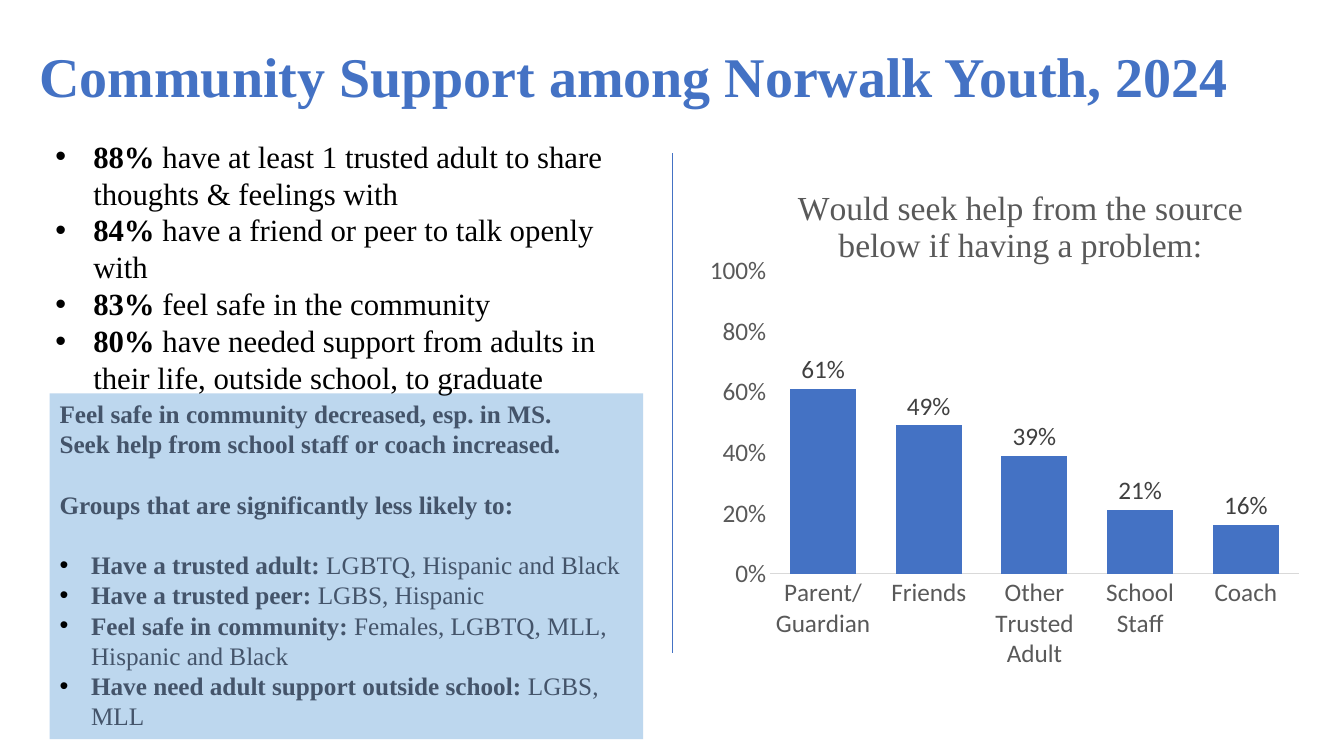
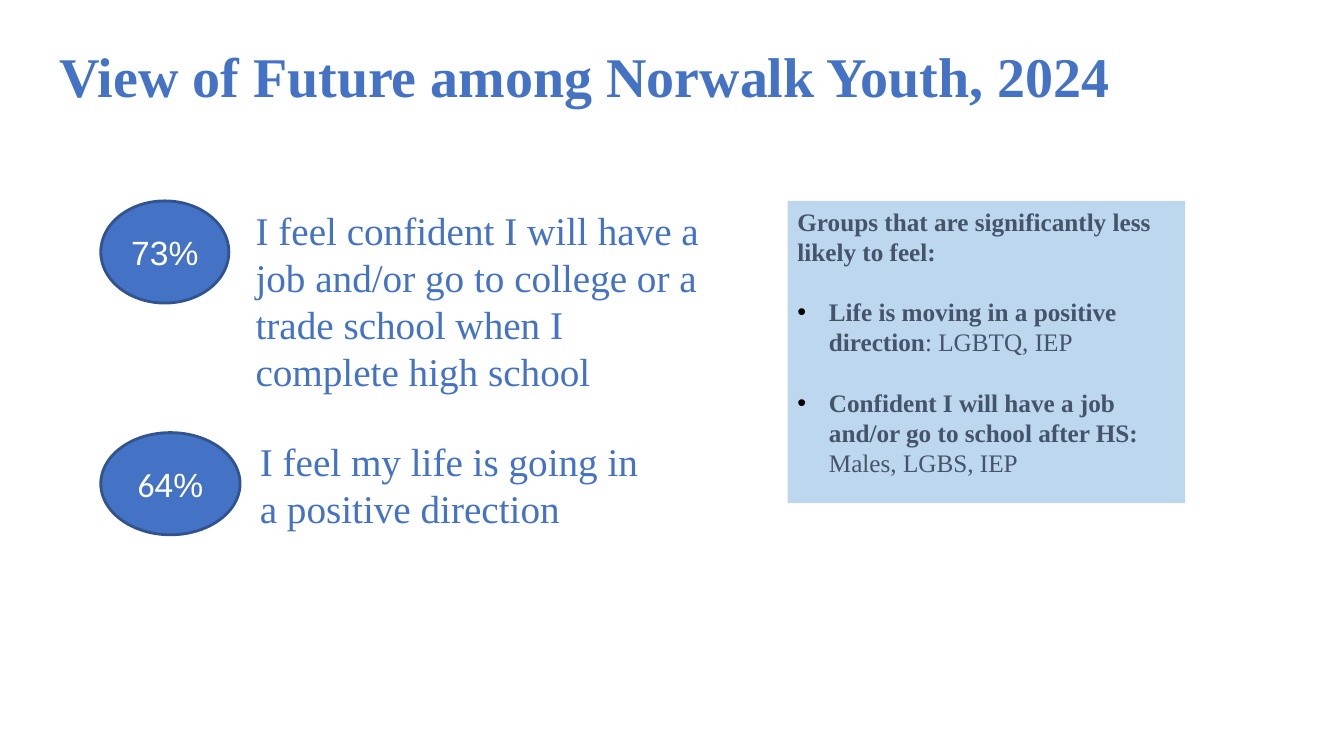
from lxml.etree import SubElement
from pptx import Presentation
from pptx.chart.data import CategoryChartData
from pptx.dml.color import RGBColor
from pptx.enum.chart import XL_CHART_TYPE, XL_LABEL_POSITION, XL_TICK_MARK
from pptx.enum.shapes import MSO_CONNECTOR, MSO_SHAPE
from pptx.enum.text import MSO_ANCHOR, PP_ALIGN
from pptx.oxml.ns import qn
from pptx.util import Pt

BLUE, DARK_BLUE, PALE_BLUE, SLATE = "4472C4", "31538F", "BDD7EE", "44546A"
BLACK, WHITE, GRAY, LABEL_GRAY, AXIS_GRAY = "000000", "FFFFFF", "595959", "404040", "D9D9D9"
SERIF, SANS, CHART_FONT = "Times New Roman", "Arial", "Calibri"
LINE_PITCH = 1.2
CALLOUT_SIZE = 18
CALLOUT_GAP = CALLOUT_SIZE * LINE_PITCH
TITLE_RIGHT = 923


def color(value):
    """Turn a hex string into a colour."""
    return RGBColor.from_string(value)


def style_font(font, size, fill, name=SERIF, bold=False):
    """Set the look of a font."""
    font.size, font.name, font.bold = Pt(size), name, bold
    font.color.rgb = color(fill)


def add_bullet(paragraph, indent):
    """Give a paragraph a black hanging bullet."""
    properties = paragraph._p.get_or_add_pPr()
    properties.set("marL", str(Pt(indent)))
    properties.set("indent", str(-Pt(indent)))
    SubElement(SubElement(properties, qn("a:buClr")), qn("a:srgbClr"), val=BLACK)
    SubElement(properties, qn("a:buFont"), typeface=SANS)
    SubElement(properties, qn("a:buChar"), char="•")


def write(frame, *runs, size, fill, name=SERIF, bold=False, pitch=LINE_PITCH,
          gap=0, indent=0, align=PP_ALIGN.LEFT):
    """Add a paragraph whose runs are pairs of text and font overrides."""
    paragraph = frame.paragraphs[0]
    if paragraph.runs:
        paragraph = frame.add_paragraph()
    paragraph.alignment = align
    if pitch:
        paragraph.line_spacing = Pt(size * pitch)
    paragraph.space_before = Pt(gap)
    if indent:
        add_bullet(paragraph, indent)
    for text, overrides in runs:
        run = paragraph.add_run()
        run.text = text
        style_font(run.font, **{"size": size, "fill": fill, "name": name, "bold": bold, **overrides})


def add_text_box(slide, left, top, width, height, anchor=MSO_ANCHOR.TOP):
    """Add a wrapping text box and return its frame."""
    frame = slide.shapes.add_textbox(Pt(left), Pt(top), Pt(width), Pt(height)).text_frame
    frame.word_wrap = True
    frame.vertical_anchor = anchor
    return frame


def add_filled_shape(slide, kind, left, top, width, height, fill, outline=None):
    """Add a flat preset shape and return its text frame."""
    shape = slide.shapes.add_shape(kind, Pt(left), Pt(top), Pt(width), Pt(height))
    shape.shadow.inherit = False
    shape.fill.solid()
    shape.fill.fore_color.rgb = color(fill)
    if outline:
        shape.line.color.rgb = color(outline)
        shape.line.width = Pt(2)
    else:
        shape.line.fill.background()
    shape.text_frame.word_wrap = True
    return shape.text_frame


def add_titled_slide(presentation, title, left):
    """Add a blank slide with the shared title style."""
    slide = presentation.slides.add_slide(presentation.slide_layouts[6])
    frame = add_text_box(slide, left, 19.5, TITLE_RIGHT - left, 72.5, MSO_ANCHOR.MIDDLE)
    write(frame, (title, {}), size=40, fill=BLUE, bold=True, pitch=0.9 * LINE_PITCH)
    return slide


def add_callout(slide, left, top, width, height, headings, groups, group_gap=0):
    """Add a pale box with bold headings and bulleted groups."""
    frame = add_filled_shape(slide, MSO_SHAPE.RECTANGLE, left, top, width, height, PALE_BLUE)
    frame.vertical_anchor = MSO_ANCHOR.TOP
    for text, gap in headings:
        write(frame, (text, {}), size=CALLOUT_SIZE, fill=SLATE, bold=True, gap=gap)
    for index, (label, members) in enumerate(groups):
        write(frame, (label, {"bold": True}), (members, {}), size=CALLOUT_SIZE, fill=SLATE,
              indent=22.5, gap=group_gap if index else CALLOUT_GAP)


def add_facts(slide, facts):
    """Add the bulleted list of percentages."""
    frame = add_text_box(slide, 32.5, 94.5, 439, 167)
    for share, text in facts:
        write(frame, (share, {"bold": True}), (text, {}), size=22, fill=BLACK, indent=27)


def add_divider(slide, left, top, bottom):
    """Add a thin vertical line."""
    line = slide.shapes.add_connector(MSO_CONNECTOR.STRAIGHT, Pt(left), Pt(top), Pt(left), Pt(bottom))
    line.line.color.rgb = color(BLUE)
    line.line.width = Pt(0.5)
    SubElement(line._element.spPr, qn("a:effectLst"))


def set_layout(parent, before, target=None, **place):
    """Place a chart part by fractions of the chart area."""
    for old in parent.findall(qn("c:layout")):
        parent.remove(old)
    layout = parent.makeelement(qn("c:layout"))
    parent.find(qn(before)).addprevious(layout)
    manual = SubElement(layout, qn("c:manualLayout"))
    if target:
        SubElement(manual, qn("c:layoutTarget"), val=target)
    for mode in ("xMode", "yMode"):
        SubElement(manual, qn(f"c:{mode}"), val="edge")
    for key, value in place.items():
        SubElement(manual, qn(f"c:{key}"), val=str(value))


def style_axis(axis):
    """Set the look shared by both axes."""
    axis.major_tick_mark = axis.minor_tick_mark = XL_TICK_MARK.NONE
    axis.has_major_gridlines = False
    style_font(axis.tick_labels.font, 18, GRAY, CHART_FONT)


def add_column_chart(slide, left, top, width, height, title_lines, shares):
    """Add the percentage column chart."""
    data = CategoryChartData(number_format="0%")
    data.categories = list(shares)
    data.add_series("Series 1", list(shares.values()))
    chart = slide.shapes.add_chart(XL_CHART_TYPE.COLUMN_CLUSTERED, Pt(left), Pt(top),
                                   Pt(width), Pt(height), data).chart
    chart.has_legend = False
    style_font(chart.font, 10, BLACK, CHART_FONT)

    chart.has_title = True
    for line in title_lines:
        write(chart.chart_title.text_frame, (line, {}), size=24, fill=GRAY,
              pitch=None, align=PP_ALIGN.CENTER)
    chart.chart_title.include_in_layout = False
    set_layout(chart.chart_title._element, "c:overlay", x=0.16, y=0.08)
    plot_area = chart._chartSpace.chart.plotArea
    set_layout(plot_area, "c:barChart", target="inner", x=0.12, y=0.24, w=0.86, h=0.56)

    style_axis(chart.category_axis)
    chart.category_axis.format.line.color.rgb = color(AXIS_GRAY)
    chart.category_axis.format.line.width = Pt(0.75)
    value_axis = chart.value_axis
    style_axis(value_axis)
    value_axis.format.line.fill.background()
    value_axis.minimum_scale, value_axis.maximum_scale, value_axis.major_unit = 0, 1, 0.2
    value_axis.tick_labels.number_format = "0%"
    value_axis.tick_labels.number_format_is_linked = False

    plot = chart.plots[0]
    plot.gap_width = 60
    plot.vary_by_categories = False
    plot.series[0].format.fill.solid()
    plot.series[0].format.fill.fore_color.rgb = color(BLUE)
    plot.has_data_labels = True
    labels = plot.data_labels
    labels.show_value = True
    labels.number_format, labels.number_format_is_linked = "0%", False
    labels.position = XL_LABEL_POSITION.OUTSIDE_END
    style_font(labels.font, 18, LABEL_GRAY, CHART_FONT)


def add_statement(slide, top, share, oval_width, text, text_left, text_width, text_height):
    """Add an oval with a percentage and the statement beside it."""
    oval = add_filled_shape(slide, MSO_SHAPE.OVAL, 72, top, oval_width, 73, BLUE, DARK_BLUE)
    oval.vertical_anchor = MSO_ANCHOR.MIDDLE
    write(oval, *share, size=24, fill=WHITE, name=SANS, pitch=None, align=PP_ALIGN.CENTER)
    frame = add_text_box(slide, text_left, top, text_width, text_height)
    write(frame, (text, {}), size=28, fill=BLUE)


def build_community_slide(presentation):
    """Build the slide on community support."""
    slide = add_titled_slide(presentation, "Community Support among Norwalk Youth, 2024", 21)
    add_callout(slide, 35.5, 281, 424, 247, [
        ("Feel safe in community decreased, esp. in MS.", 0),
        ("Seek help from school staff or coach increased.", 0),
        ("Groups that are significantly less likely to:", CALLOUT_GAP),
    ], [
        ("Have a trusted adult: ", "LGBTQ, Hispanic and Black"),
        ("Have a trusted peer: ", "LGBS, Hispanic"),
        ("Feel safe in community:", " Females, LGBTQ, MLL, Hispanic and Black"),
        ("Have need adult support outside school:", " LGBS, MLL"),
    ])
    add_column_chart(slide, 497.5, 101, 439, 386,
                     ["Would seek help from the source", "below if having a problem:"],
                     {"Parent/Guardian": 0.61, "Friends": 0.49, "Other Trusted Adult": 0.39,
                      "School Staff": 0.21, "Coach": 0.16})
    add_facts(slide, [
        ("88% ", "have at least 1 trusted adult to share thoughts & feelings with"),
        ("84% ", "have a friend or peer to talk openly with"),
        ("83% ", "feel safe in the community"),
        ("80% ", "have needed support from adults in their life, outside school, to graduate"),
    ])
    add_divider(slide, 480, 109.5, 466.5)


def build_future_slide(presentation):
    """Build the slide on the view of the future."""
    slide = add_titled_slide(presentation, "View of Future among Norwalk Youth, 2024", 35.5)
    add_callout(slide, 562.5, 143.5, 284, 216, [
        ("Groups that are significantly less likely to feel:", 0),
    ], [
        ("Life is moving in a positive direction", ": LGBTQ, IEP"),
        ("Confident I will have a job and/or go to school after HS: ", "Males, LGBS, IEP"),
    ], group_gap=CALLOUT_GAP)
    add_statement(slide, 143.5, [("73%", {})], 91.5,
                  "I feel confident I will have a job and/or go to college or a trade school "
                  "when I complete high school", 175.5, 335.5, 143)
    add_statement(slide, 309, [("6", {"name": CHART_FONT}), ("4%", {})], 99.5,
                  "I feel my life is going in a positive direction", 178.5, 294.5, 75)


def main():
    """Build and save the presentation."""
    presentation = Presentation()
    presentation.slide_width, presentation.slide_height = Pt(960), Pt(540)
    build_community_slide(presentation)
    build_future_slide(presentation)
    presentation.save("out.pptx")


if __name__ == "__main__":
    main()
